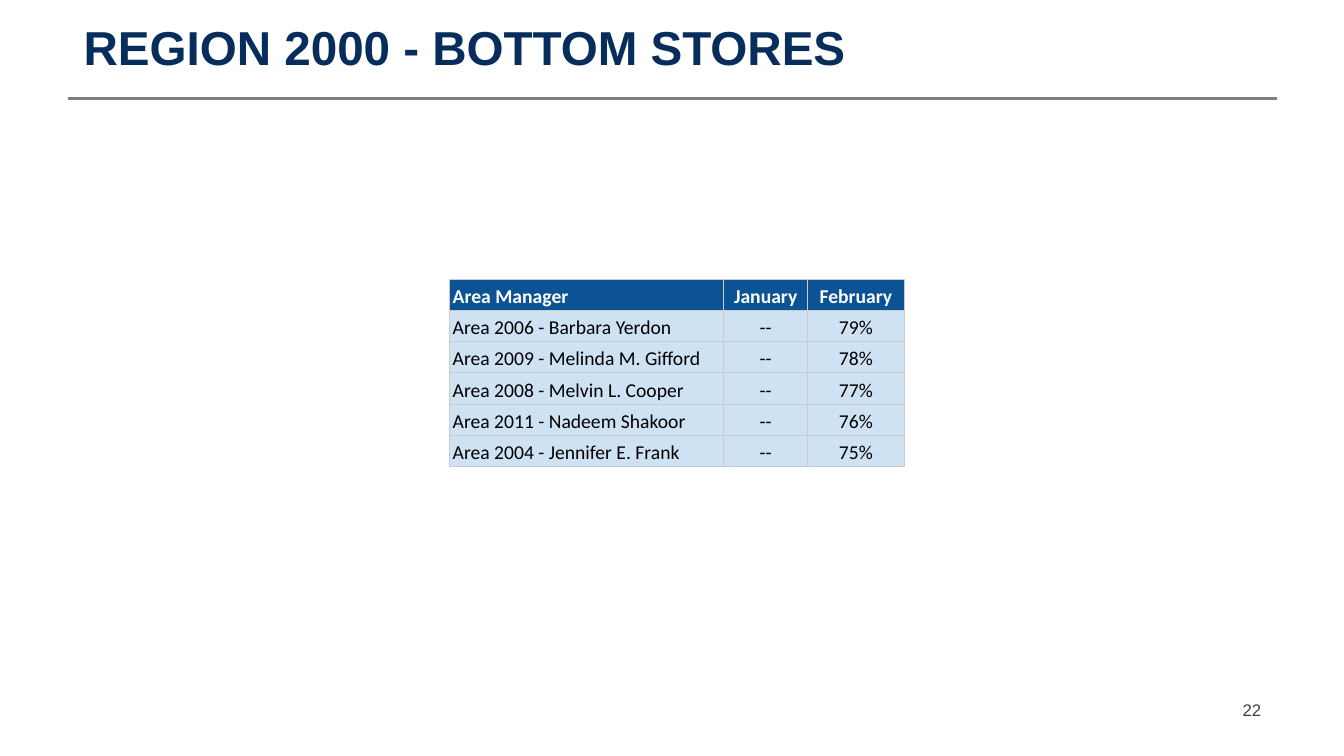
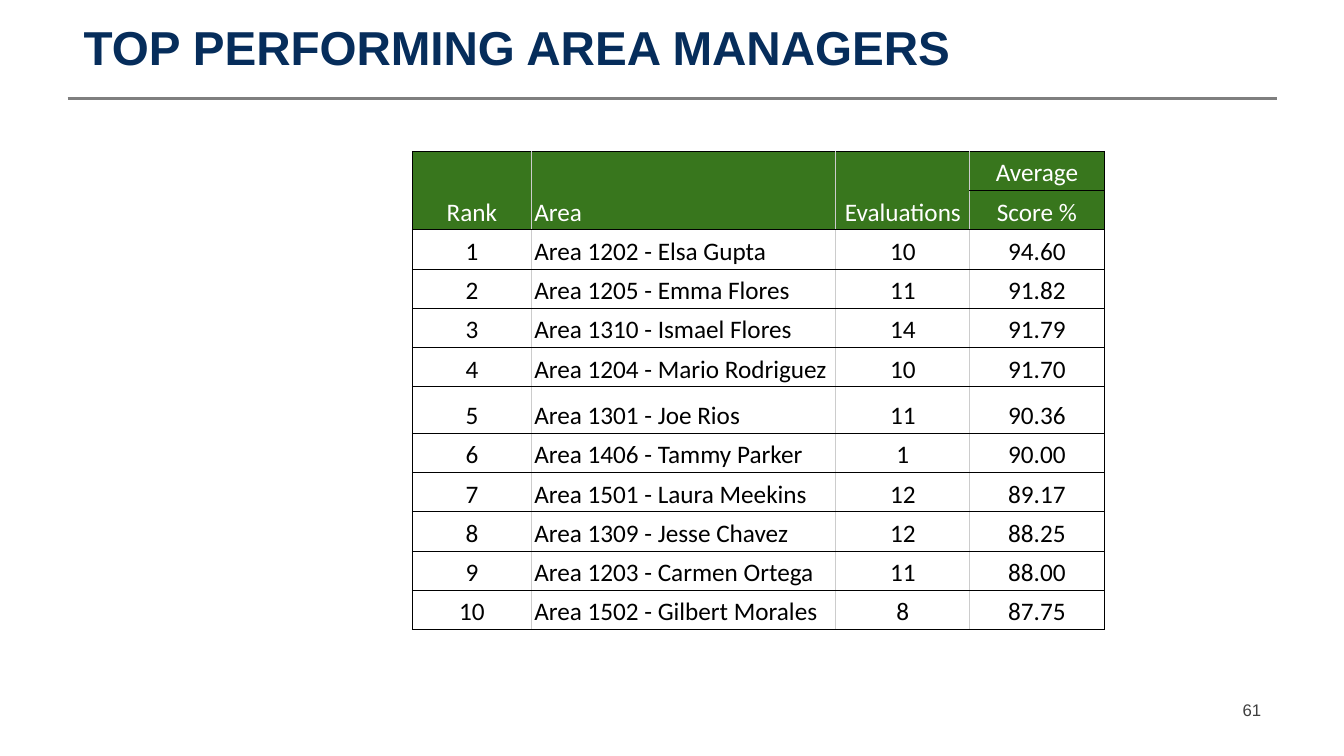
from lxml import etree
from pptx import Presentation
from pptx.dml.color import RGBColor
from pptx.enum import shapes, text
from pptx.oxml import ns
from pptx.util import Inches, Pt

NAVY, RULE_GRAY, NUMBER_GRAY = "062D5B", "7F7F7F", "3F3F3F"
BLACK, WHITE, GRID_GRAY = "000000", "FFFFFF", "CCCCCC"

reports = [
    {
        "title": "REGION 2000 - BOTTOM STORES",
        "number": "22",
        "left": 4.46, "top": 2.77,
        "columns": [2.72, 0.83, 0.96],
        "row_height": 0.31, "tall_rows": {},
        "left_column": 0, "header_rows": 1, "merged_columns": [],
        "size": 14, "bold_header": True,
        "header_fill": "0B5394", "body_fill": "CFE2F3",
        "outline": GRID_GRAY,
        "rows": [
            ["Area Manager", "January", "February"],
            ["Area 2006 - Barbara Yerdon", "--", "79%"],
            ["Area 2009 - Melinda M. Gifford", "--", "78%"],
            ["Area 2008 - Melvin L. Cooper", "--", "77%"],
            ["Area 2011 - Nadeem Shakoor", "--", "76%"],
            ["Area 2004 - Jennifer E. Frank", "--", "75%"],
        ],
    },
    {
        "title": "TOP PERFORMING AREA MANAGERS",
        "number": "61",
        "left": 4.09, "top": 1.5,
        "columns": [1.18, 3.02, 1.33, 1.33],
        "row_height": 0.39, "tall_rows": {6: 0.46},
        "left_column": 1, "header_rows": 2, "merged_columns": [0, 1, 2],
        "size": 18, "bold_header": False,
        "header_fill": "38761D", "body_fill": WHITE,
        "outline": BLACK,
        "rows": [
            ["Rank", "Area", "Evaluations", "Average"],
            ["", "", "", "Score %"],
            ["1", "Area 1202 - Elsa Gupta", "10", "94.60"],
            ["2", "Area 1205 - Emma Flores", "11", "91.82"],
            ["3", "Area 1310 - Ismael Flores", "14", "91.79"],
            ["4", "Area 1204 - Mario Rodriguez", "10", "91.70"],
            ["5", "Area 1301 - Joe Rios", "11", "90.36"],
            ["6", "Area 1406 - Tammy Parker", "1", "90.00"],
            ["7", "Area 1501 - Laura Meekins", "12", "89.17"],
            ["8", "Area 1309 - Jesse Chavez", "12", "88.25"],
            ["9", "Area 1203 - Carmen Ortega", "11", "88.00"],
            ["10", "Area 1502 - Gilbert Morales", "8", "87.75"],
        ],
    },
]


def color(value):
    return RGBColor.from_string(value)


def add_text(frame, words, font, size, ink, bold, align, spacing, anchor, margins):
    frame.word_wrap = True
    frame.vertical_anchor = anchor
    frame.margin_left = frame.margin_right = Inches(margins[0])
    frame.margin_top = frame.margin_bottom = Inches(margins[1])
    paragraph = frame.paragraphs[0]
    paragraph.alignment = align
    paragraph.line_spacing = spacing
    run = paragraph.add_run()
    run.text = words
    run.font.name = font
    run.font.size = Pt(size)
    run.font.bold = bold
    run.font.color.rgb = color(ink)


presentation = Presentation()
presentation.slide_width = Inches(13.33)
presentation.slide_height = Inches(7.5)

for report in reports:
    slide = presentation.slides.add_slide(presentation.slide_layouts[5])

    rule = slide.shapes.add_connector(
        shapes.MSO_CONNECTOR.STRAIGHT, Inches(0.67), Inches(0.98), Inches(12.67), Inches(0.98))
    rule.line.color.rgb = color(RULE_GRAY)
    rule.line.width = Pt(2)
    etree.SubElement(rule._element.spPr, ns.qn("a:effectLst"))

    title = slide.shapes.title
    title.left, title.top = Inches(0.67), Inches(0.31)
    title.width, title.height = Inches(12), Inches(0.59)
    title.text_frame.auto_size = text.MSO_AUTO_SIZE.NONE
    add_text(title.text_frame, report["title"], "Arial", 34, NAVY, True,
             text.PP_ALIGN.LEFT, 0.8, text.MSO_ANCHOR.BOTTOM, (0.16, 0.16))

    number = slide.shapes.add_textbox(Inches(9.56), Inches(6.84), Inches(3.11), Inches(0.4))
    add_text(number.text_frame, report["number"], "Arial", 12, NUMBER_GRAY, False,
             text.PP_ALIGN.RIGHT, 1.0, text.MSO_ANCHOR.MIDDLE, (0.16, 0.08))

    rows, columns = report["rows"], report["columns"]
    heights = [report["tall_rows"].get(index, report["row_height"]) for index in range(len(rows))]
    table = slide.shapes.add_table(
        len(rows), len(columns), Inches(report["left"]), Inches(report["top"]),
        Inches(sum(columns)), Inches(sum(heights))).table
    table.first_row = table.horz_banding = False
    for column, width in zip(table.columns, columns):
        column.width = Inches(width)
    for row, height in zip(table.rows, heights):
        row.height = Inches(height)
    for merged in report["merged_columns"]:
        table.cell(0, merged).merge(table.cell(report["header_rows"] - 1, merged))

    for row_index, values in enumerate(rows):
        header = row_index < report["header_rows"]
        for column_index, value in enumerate(values):
            cell = table.cell(row_index, column_index)
            outline = report["outline"]
            borders = {
                "a:lnL": outline if column_index == 0 else GRID_GRAY,
                "a:lnR": outline if column_index == len(columns) - 1 else GRID_GRAY,
                "a:lnT": outline,
                "a:lnB": outline,
            }
            properties = cell._tc.get_or_add_tcPr()
            for side, ink in borders.items():
                border = etree.SubElement(properties, ns.qn(side), w=str(Pt(0.75)))
                fill = etree.SubElement(border, ns.qn("a:solidFill"))
                etree.SubElement(fill, ns.qn("a:srgbClr"), val=ink)
            cell.fill.solid()
            cell.fill.fore_color.rgb = color(report["header_fill" if header else "body_fill"])
            if cell.is_spanned:
                continue
            cell.vertical_anchor = text.MSO_ANCHOR.BOTTOM
            cell.margin_left = cell.margin_right = Inches(0.03)
            cell.margin_top = cell.margin_bottom = Inches(0.02)
            paragraph = cell.text_frame.paragraphs[0]
            left_aligned = column_index == report["left_column"]
            paragraph.alignment = text.PP_ALIGN.LEFT if left_aligned else text.PP_ALIGN.CENTER
            paragraph.line_spacing = 1.15
            run = paragraph.add_run()
            run.text = value
            run.font.name = "Calibri"
            run.font.size = Pt(report["size"])
            run.font.bold = header and report["bold_header"]
            run.font.color.rgb = color(WHITE if header else BLACK)

presentation.save("out.pptx")
